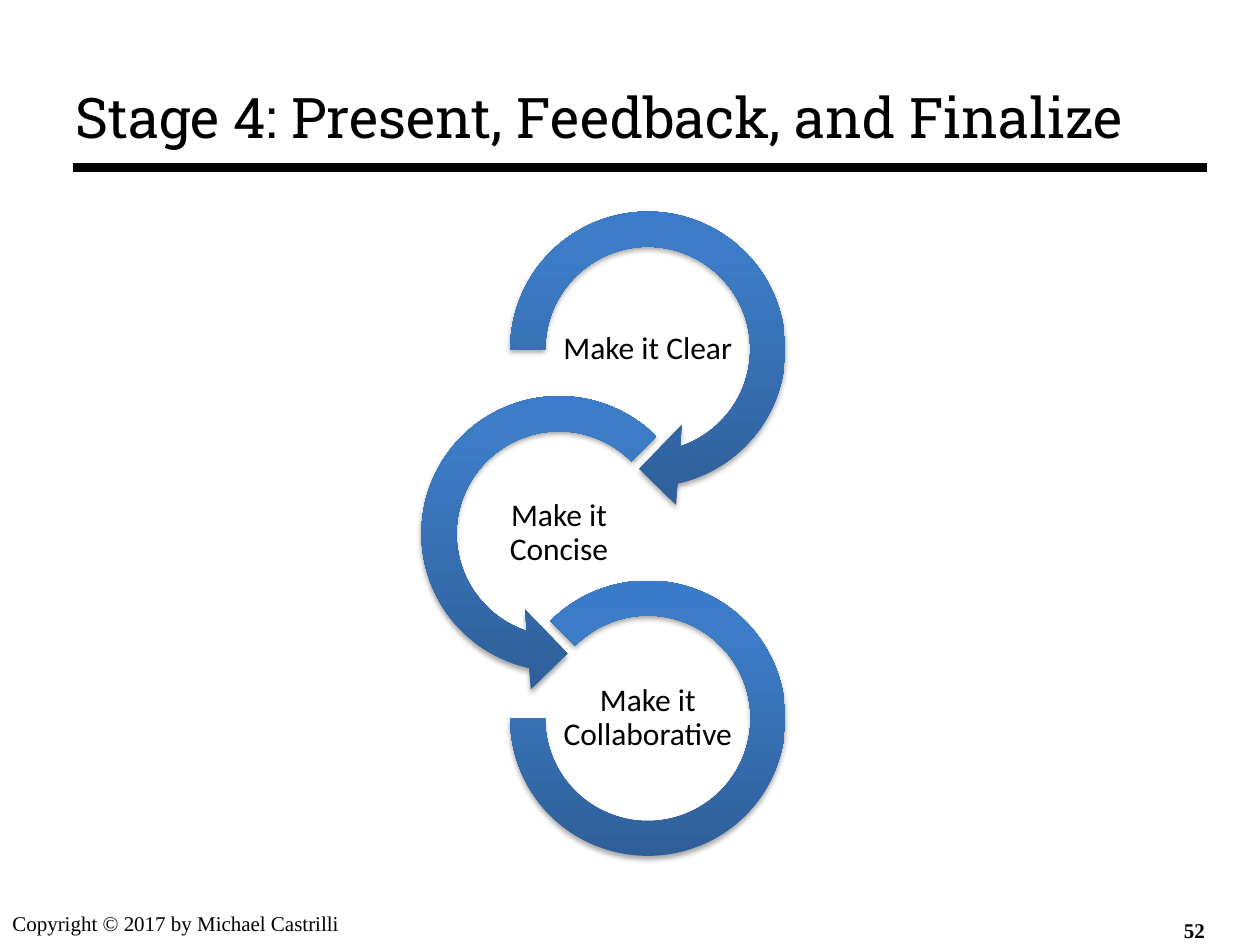
from pptx import Presentation
from pptx.dml.color import RGBColor
from pptx.enum.shapes import MSO_CONNECTOR as Connector, MSO_SHAPE as Shape
from pptx.enum.text import MSO_ANCHOR as Anchor, PP_ALIGN as Align
from pptx.oxml import parse_xml
from pptx.oxml.ns import nsdecls, qn
from pptx.util import Cm, Pt


def color(hex_text):
    return RGBColor.from_string(hex_text)


class SlideBuilder:
    ink = "000000"
    gradient = ((0, "2F5F99"), (80, "3D7CC7"), (100, "3A7CCB"))
    title_font = "Roboto Slab"
    label_font = "Calibri"
    footer_font = "Times New Roman"

    def __init__(self, slide):
        self.slide = slide

    def text(self, text, left, top, width, height, font, size, shapes=None,
             align=Align.LEFT, anchor=Anchor.MIDDLE, bold=False,
             margin=None, line_spacing=None):
        shapes = shapes or self.slide.shapes
        box = shapes.add_textbox(Cm(left), Cm(top), Cm(width), Cm(height))
        frame = box.text_frame
        frame.word_wrap = True
        frame.vertical_anchor = anchor
        if margin is not None:
            frame.margin_left = frame.margin_right = Cm(margin)
            frame.margin_top = frame.margin_bottom = Cm(margin)
        paragraph = frame.paragraphs[0]
        paragraph.alignment = align
        paragraph.line_spacing = line_spacing
        run = paragraph.add_run()
        run.text = text
        run.font.name = font
        run.font.size = Pt(size)
        run.font.bold = bold
        run.font.color.rgb = color(self.ink)

    def rule(self, left, right, y, weight):
        line = self.slide.shapes.add_connector(
            Connector.STRAIGHT, Cm(left), Cm(y), Cm(right), Cm(y))
        line.line.color.rgb = color(self.ink)
        line.line.width = Pt(weight)
        line._element.spPr.append(parse_xml(f"<a:effectLst {nsdecls('a')}/>"))

    def ring(self, shapes, kind, center_x, center_y, size, adjustments):
        shape = shapes.add_shape(kind, Cm(center_x - size / 2),
                                 Cm(center_y - size / 2), Cm(size), Cm(size))
        for index, value in enumerate(adjustments):
            shape.adjustments[index] = value
        shape.line.fill.background()
        shape.shadow.inherit = False
        self.shade(shape)

    def shade(self, shape):
        """Vertical gradient fill and a soft shadow below."""
        shape.fill.background()
        properties = shape._element.spPr
        stops = "".join(
            f'<a:gs pos="{position * 1000}"><a:srgbClr val="{tone}"/></a:gs>'
            for position, tone in self.gradient)
        properties.replace(properties.find(qn("a:noFill")), parse_xml(
            f'<a:gradFill {nsdecls("a")} rotWithShape="1">'
            f'<a:gsLst>{stops}</a:gsLst>'
            '<a:lin ang="16200000" scaled="0"/></a:gradFill>'))
        properties.find(qn("a:effectLst")).append(parse_xml(
            f'<a:outerShdw {nsdecls("a")} blurRad="{Pt(3.1)}" '
            f'dist="{Pt(1.8)}" dir="5400000" rotWithShape="0">'
            f'<a:srgbClr val="{self.ink}"><a:alpha val="35000"/></a:srgbClr>'
            '</a:outerShdw>'))


def main():
    presentation = Presentation()
    presentation.slide_width = Cm(25.4)
    presentation.slide_height = Cm(19.05)
    slide = presentation.slides.add_slide(presentation.slide_layouts[6])
    builder = SlideBuilder(slide)

    # Footer and title
    builder.text("Copyright © 2017 by Michael Castrilli", 0, 18.24, 10.36, 1.02,
                 builder.footer_font, 12, anchor=Anchor.TOP)
    builder.rule(1.48, 24.34, 3.38, 5)
    builder.text("Stage 4: Present, Feedback, and Finalize", 1.27, 0.76, 22.86,
                 3.18, builder.title_font, 32)

    # Chain of rings, alternating right and left
    steps = (
        ("Make it Clear", Shape.CIRCULAR_ARROW, 6.45,
         (0.11, 11.42, 45, 108, 0.125)),
        ("Make it Concise", Shape.LEFT_CIRCULAR_ARROW, 6.45,
         (0.11, 11.42, 63, 189, 0.125)),
        ("Make it Collaborative", Shape.BLOCK_ARC, 5.55, (135, 108, 0.127)),
    )
    columns = (13.06, 11.27)
    first_y, step_y = 7.04, 3.72
    label_width, label_height = 3.58, 1.8
    chain = slide.shapes.add_group_shape().shapes
    for index, (label, kind, size, adjustments) in enumerate(steps):
        x, y = columns[index % 2], first_y + index * step_y
        builder.ring(chain, kind, x, y, size, adjustments)
        builder.text(label, x - label_width / 2, y - label_height / 2,
                     label_width, label_height, builder.label_font, 18, chain,
                     align=Align.CENTER, margin=0.03, line_spacing=0.9)

    # Slide number
    builder.text("52", 18.62, 18.24, 5.92, 1.02, builder.footer_font, 12,
                 align=Align.RIGHT, bold=True)

    presentation.save("out.pptx")


if __name__ == "__main__":
    main()
